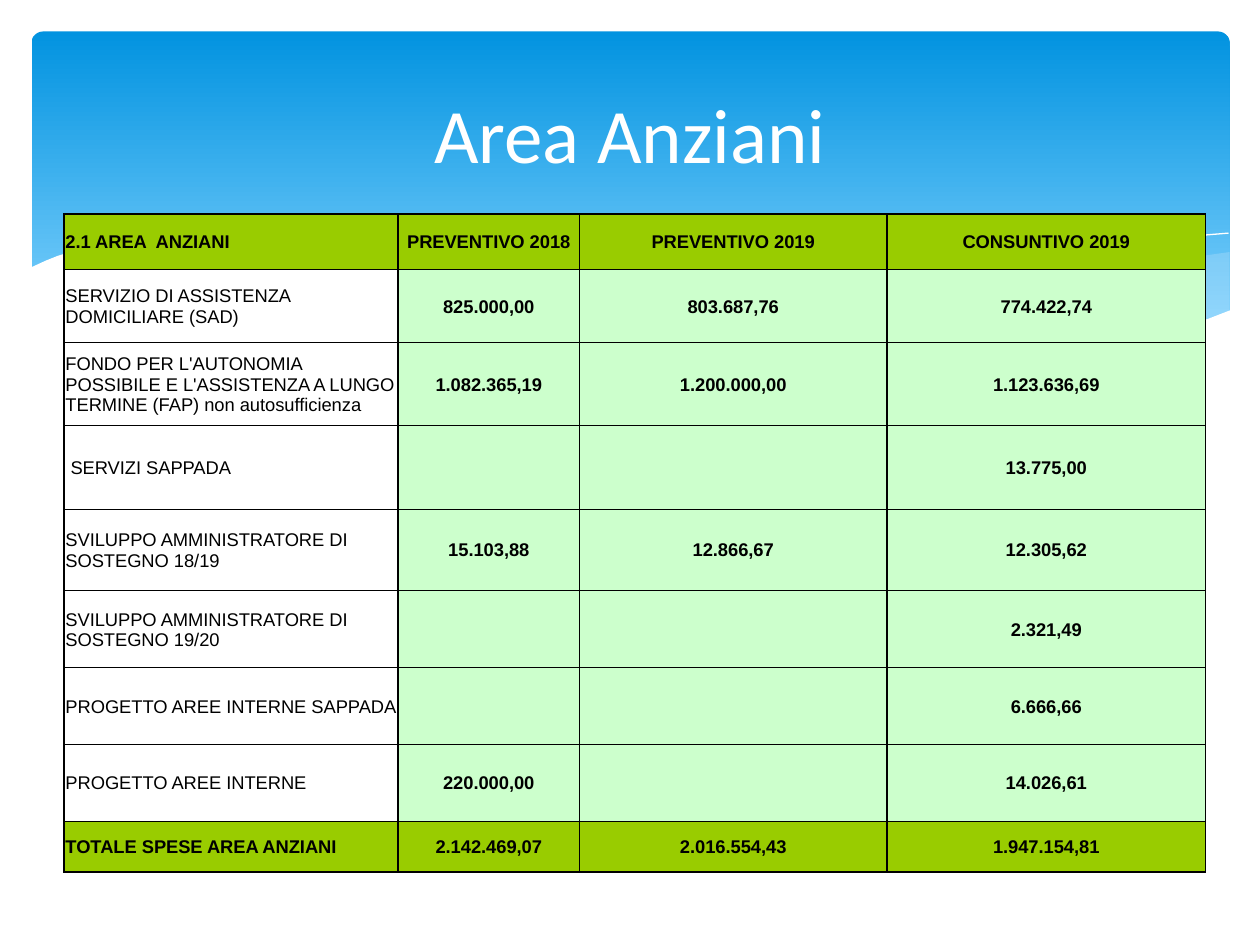
from dataclasses import dataclass
from typing import Optional

import lxml.etree
import pptx
import pptx.dml.color
import pptx.enum.shapes
import pptx.enum.text
import pptx.oxml
import pptx.oxml.ns
import pptx.util

Inches = pptx.util.Inches
Pt = pptx.util.Pt
qn = pptx.oxml.ns.qn

GREEN, PALE, WHITE, BLACK, MIST = "99CC00", "CCFFCC", "FFFFFF", "000000", "C6E7FC"
COLS = [2.65, 1.44, 1.25, 1.19, 2.53]
ROWS = [0.44, 0.58, 0.66, 0.66, 0.65, 0.61, 0.61, 0.61, 0.4]
UNMERGED_ROW = 3
DATA = [
    ("2.1 AREA  ANZIANI", "PREVENTIVO 2018", "PREVENTIVO 2019", "CONSUNTIVO 2019"),
    ("SERVIZIO DI ASSISTENZA DOMICILIARE (SAD)", "825.000,00", "803.687,76", "774.422,74"),
    ("FONDO PER L'AUTONOMIA POSSIBILE E L'ASSISTENZA A LUNGO TERMINE (FAP) non autosufficienza",
     "1.082.365,19", "1.200.000,00", "1.123.636,69"),
    (" SERVIZI SAPPADA", "", "", "13.775,00"),
    ("SVILUPPO AMMINISTRATORE DI SOSTEGNO 18/19", "15.103,88", "12.866,67", "12.305,62"),
    ("SVILUPPO AMMINISTRATORE DI SOSTEGNO 19/20", "", "", "2.321,49"),
    ("PROGETTO AREE INTERNE SAPPADA", "", "", "6.666,66"),
    ("PROGETTO AREE INTERNE", "220.000,00", "", "14.026,61"),
    ("TOTALE SPESE AREA ANZIANI", "2.142.469,07", "2.016.554,43", "1.947.154,81"),
]


@dataclass
class Wave:
    points: list[tuple[float, float]]
    fill: Optional[str] = None
    alpha: int = 100
    line: Optional[str] = None


WAVES = [
    Wave([(9.76, 2), (9.48, 2.04), (9.21, 2.1), (8.91, 2.16), (8.61, 2.23), (8.05, 2.37),
          (7.53, 2.48), (7.06, 2.57), (6.61, 2.65), (6.91, 2.69), (7.19, 2.72), (7.45, 2.75),
          (7.69, 2.77), (8.03, 2.78), (8.35, 2.77), (8.63, 2.75), (8.89, 2.72), (9.13, 2.67),
          (9.35, 2.62), (9.49, 2.57), (9.63, 2.52), (9.76, 2.47)], MIST, 29),
    Wave([(8.93, 2.73), (8.66, 2.69), (8.37, 2.65), (8.07, 2.6), (7.75, 2.54), (7.41, 2.47),
          (7.06, 2.4), (6.68, 2.31), (6.29, 2.22), (5.98, 2.14), (5.69, 2.08), (5.41, 2.03),
          (5.14, 1.98), (4.89, 1.94), (4.65, 1.91), (4.2, 1.87), (3.8, 1.85), (3.44, 1.86),
          (3.13, 1.88), (2.86, 1.91), (3.23, 1.96), (3.62, 2.03), (4.04, 2.11), (4.49, 2.22),
          (4.91, 2.32), (5.3, 2.4), (5.66, 2.48), (6.01, 2.55), (6.34, 2.61), (6.65, 2.66),
          (6.95, 2.7), (7.22, 2.74), (7.48, 2.76), (7.85, 2.78), (8.28, 2.78), (8.67, 2.76)],
         MIST, 40),
    Wave([(3.09, 1.95), (3.28, 1.92), (3.53, 1.89), (3.87, 1.87), (4.33, 1.87), (4.69, 1.89),
          (5.1, 1.92), (5.56, 1.97), (6.08, 2.04), (6.65, 2.13), (7.27, 2.26), (7.95, 2.41),
          (8.69, 2.61), (9.07, 2.72)], line=WHITE),
    Wave([(6.13, 2.57), (6.53, 2.46), (6.95, 2.35), (7.48, 2.23), (8.06, 2.1), (8.66, 1.99),
          (8.95, 1.94), (9.24, 1.9), (9.51, 1.87), (9.75, 1.85)], line=WHITE),
    Wave([(9.77, 2.46), (9.59, 2.53), (9.4, 2.59), (9.2, 2.65), (8.99, 2.69), (8.75, 2.73),
          (8.5, 2.75), (8.23, 2.77), (7.93, 2.76), (7.61, 2.75), (7.26, 2.72), (6.88, 2.68),
          (6.48, 2.62), (6.03, 2.54), (5.55, 2.45), (5.03, 2.33), (4.47, 2.2), (3.91, 2.07),
          (3.4, 1.97), (2.92, 1.9), (2.5, 1.86), (2.11, 1.84), (1.77, 1.84), (1.46, 1.85),
          (1.19, 1.87), (0.95, 1.91), (0.76, 1.95), (0.59, 1.99), (0.46, 2.03), (0.36, 2.07),
          (0.23, 2.13), (0.23, 3.29), (9.77, 3.29)], WHITE),
]


def rgb(value: str) -> pptx.dml.color.RGBColor:
    return pptx.dml.color.RGBColor.from_string(value)


def format_text(tf, size: float, font: str, color: str, bold: bool, centred: bool) -> None:
    p = tf.paragraphs[0]
    p.alignment = pptx.enum.text.PP_ALIGN.CENTER if centred else pptx.enum.text.PP_ALIGN.LEFT
    for f in [p.font] + [r.font for r in p.runs]:
        f.size, f.name, f.bold = Pt(size), font, bold
        f.color.rgb = rgb(color)


def add_banner(s) -> None:
    sp = s.shapes.add_shape(pptx.enum.shapes.MSO_SHAPE.ROUNDED_RECTANGLE,
                            Inches(0.25), Inches(0.25), Inches(9.51), Inches(2.7))
    sp.adjustments[0] = 0.034
    sp.shadow.inherit = False
    sp.line.fill.background()
    sp.fill.gradient()
    sp.fill.gradient_angle = 270
    for stop, color, position in zip(sp.fill.gradient_stops, ("0293E0", "83D3FE"), (0, 0.9)):
        stop.color.rgb = rgb(color)
        stop.position = position


def add_wave(s, wave: Wave) -> None:
    points = [(Inches(x), Inches(y)) for x, y in wave.points]
    builder = s.shapes.build_freeform(*points[0])
    builder.add_line_segments(points[1:], close=wave.fill is not None)
    sp = builder.convert_to_shape()
    sp.shadow.inherit = False
    if wave.fill:
        sp.fill.solid()
        sp.fill.fore_color.rgb = rgb(wave.fill)
        if wave.alpha < 100:
            clr = sp.fill._xPr.find(".//" + qn("a:srgbClr"))
            lxml.etree.SubElement(clr, qn("a:alpha"), val=str(wave.alpha * 1000))
    else:
        sp.fill.background()
    if wave.line:
        sp.line.color.rgb = rgb(wave.line)
        sp.line.width = Pt(0)
    else:
        sp.line.fill.background()


def set_borders(cell, widths: dict[str, float]) -> None:
    tc_pr = cell._tc.get_or_add_tcPr()
    for i, (side, width) in enumerate(widths.items()):
        ln = lxml.etree.Element(qn(f"a:ln{side}"), w=str(Pt(width)))
        if width:
            fill = lxml.etree.SubElement(ln, qn("a:solidFill"))
            lxml.etree.SubElement(fill, qn("a:srgbClr"), val=BLACK)
        else:
            lxml.etree.SubElement(ln, qn("a:noFill"))
        tc_pr.insert(i, ln)


def format_cell(cell, row: int, col: int) -> None:
    last = len(ROWS) - 1
    strong = row in (0, last)
    cell.margin_left = cell.margin_top = cell.margin_right = Inches(0.01)
    cell.margin_bottom = 0
    cell.vertical_anchor = pptx.enum.text.MSO_ANCHOR.MIDDLE
    format_text(cell.text_frame, 10.5, "Arial", BLACK, strong or col > 0, col > 0)
    if strong or col:
        cell.fill.solid()
        cell.fill.fore_color.rgb = rgb(GREEN if strong else PALE)
    else:
        cell.fill.background()
    set_borders(cell, {
        "L": 0 if (row, col) == (UNMERGED_ROW, 3) else 1,
        "R": 0 if (row, col) == (UNMERGED_ROW, 2) else 1,
        "T": 1 if row in (0, 1, last) else 0.5,
        "B": 1 if row in (0, last - 1, last) else 0.5,
    })


def add_costs_table(s) -> None:
    frame = s.shapes.add_table(len(ROWS), len(COLS), Inches(0.51), Inches(1.7),
                               Inches(sum(COLS)), Inches(sum(ROWS)))
    table = frame.table
    table.first_row = table.horz_banding = False
    for column, width in zip(table.columns, COLS):
        column.width = Inches(width)
    for i, (height, (label, budget_2018, budget_2019, actual)) in enumerate(zip(ROWS, DATA)):
        table.rows[i].height = Inches(height)
        if i != UNMERGED_ROW:
            table.cell(i, 2).merge(table.cell(i, 3))
        for j, text in enumerate((label, budget_2018, budget_2019, "", actual)):
            cell = table.cell(i, j)
            cell.text_frame.text = text
            format_cell(cell, i, j)


def add_title(s, text: str) -> None:
    sp = s.shapes.add_textbox(Inches(0.5), Inches(0.37), Inches(9), Inches(1.37))
    tf = sp.text_frame
    tf.word_wrap = True
    tf.vertical_anchor = pptx.enum.text.MSO_ANCHOR.MIDDLE
    tf.text = text
    format_text(tf, 44, "Calibri", WHITE, False, True)


def main() -> None:
    """Build the slide on the costs of the services for the elderly."""
    prs = pptx.Presentation()
    prs.slide_width, prs.slide_height = Inches(10), Inches(7.5)
    s = prs.slides.add_slide(prs.slide_layouts[6])
    add_banner(s)
    for wave in WAVES:
        add_wave(s, wave)
    add_costs_table(s)
    add_title(s, "Area Anziani")
    prs.save("out.pptx")


if __name__ == "__main__":
    main()
